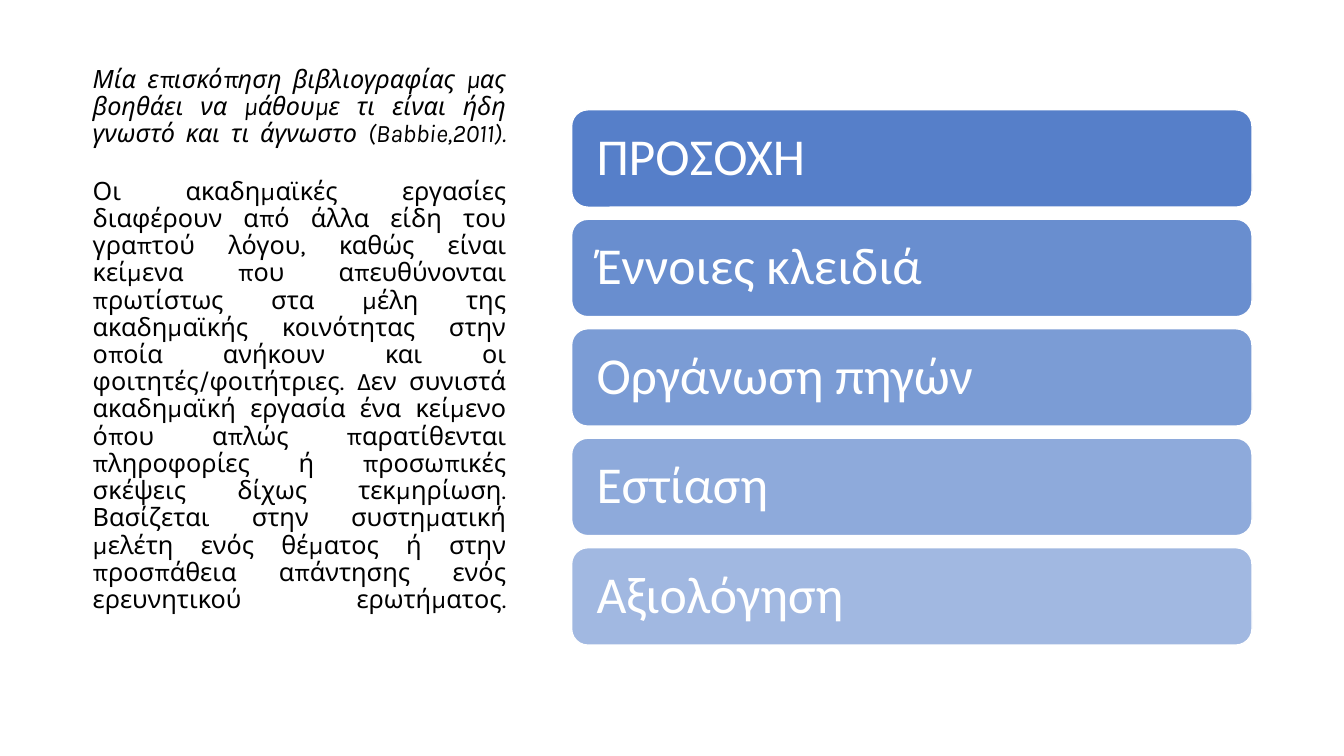
from lxml import etree
from pptx import Presentation
from pptx.dml.color import RGBColor
from pptx.enum import shapes, text
from pptx.oxml import ns
from pptx.util import Pt

QUOTE = ("Μία επισκόπηση βιβλιογραφίας μας βοηθάει να μάθουμε τι είναι ήδη "
         "γνωστό και τι άγνωστο (Babbie,2011).")
BODY = ("Οι ακαδημαϊκές εργασίες διαφέρουν από άλλα είδη του γραπτού λόγου, "
        "καθώς είναι κείμενα που απευθύνονται πρωτίστως στα μέλη της "
        "ακαδημαϊκής κοινότητας στην οποία ανήκουν και οι "
        "φοιτητές/φοιτήτριες. Δεν συνιστά ακαδημαϊκή εργασία ένα κείμενο "
        "όπου απλώς παρατίθενται πληροφορίες ή προσωπικές σκέψεις δίχως "
        "τεκμηρίωση. Βασίζεται στην συστηματική μελέτη ενός θέματος ή στην "
        "προσπάθεια απάντησης ενός ερευνητικού ερωτήματος.")
STEPS = ["ΠΡΟΣΟΧΗ", "Έννοιες κλειδιά", "Οργάνωση πηγών", "Εστίαση", "Αξιολόγηση"]


def color(hex_value):
    """Turn a hex string into a colour."""
    return RGBColor.from_string(hex_value)


def write(paragraph, content, *, size, font, fill, italic=False,
          align=text.PP_ALIGN.LEFT):
    """Write formatted text into a paragraph."""
    paragraph.alignment = align
    paragraph.line_spacing = 0.9
    run = paragraph.add_run()
    run.text = content
    run.font.size = Pt(size)
    run.font.name = font
    run.font.italic = italic
    run.font.color.rgb = color(fill)


def add_intro(slide):
    """Add the justified column, with breaks that stretch each last line."""
    frame = slide.shapes.add_textbox(Pt(59.2), Pt(46), Pt(309.6), Pt(415.5)).text_frame
    frame.word_wrap = True
    frame.vertical_anchor = text.MSO_ANCHOR.BOTTOM
    for paragraph, content, italic in (
            (frame.paragraphs[0], QUOTE, True), (frame.add_paragraph(), BODY, False)):
        write(paragraph, content, size=18, font="Karla", fill="000000",
              italic=italic, align=text.PP_ALIGN.JUSTIFY)
        paragraph.add_line_break()


def add_step(slide, label, top, opacity):
    """Add one translucent rounded bar with its label."""
    shape = slide.shapes.add_shape(shapes.MSO_SHAPE.ROUNDED_RECTANGLE,
                                   Pt(408.3), Pt(top), Pt(486), Pt(69.6))
    shape.shadow.inherit = False
    shape.fill.solid()
    shape.fill.fore_color.rgb = color("4472C4")
    fill_color = shape.fill._xPr.find(".//" + ns.qn("a:srgbClr"))
    etree.SubElement(fill_color, ns.qn("a:alpha"), val=str(opacity * 1000))
    shape.line.color.rgb = color("FFFFFF")
    shape.line.width = Pt(1)
    frame = shape.text_frame
    frame.word_wrap = True
    frame.vertical_anchor = text.MSO_ANCHOR.MIDDLE
    frame.margin_left = frame.margin_right = Pt(14.4)
    write(frame.paragraphs[0], label, size=37, font="Calibri", fill="FFFFFF")


def main():
    """Build and save the slide."""
    presentation = Presentation()
    presentation.slide_width, presentation.slide_height = Pt(960), Pt(540)
    slide = presentation.slides.add_slide(presentation.slide_layouts[6])
    add_intro(slide)
    for index, label in enumerate(STEPS):
        add_step(slide, label, 78.4 + index * 78.2, 90 - index * 10)
    presentation.save("out.pptx")


if __name__ == "__main__":
    main()
